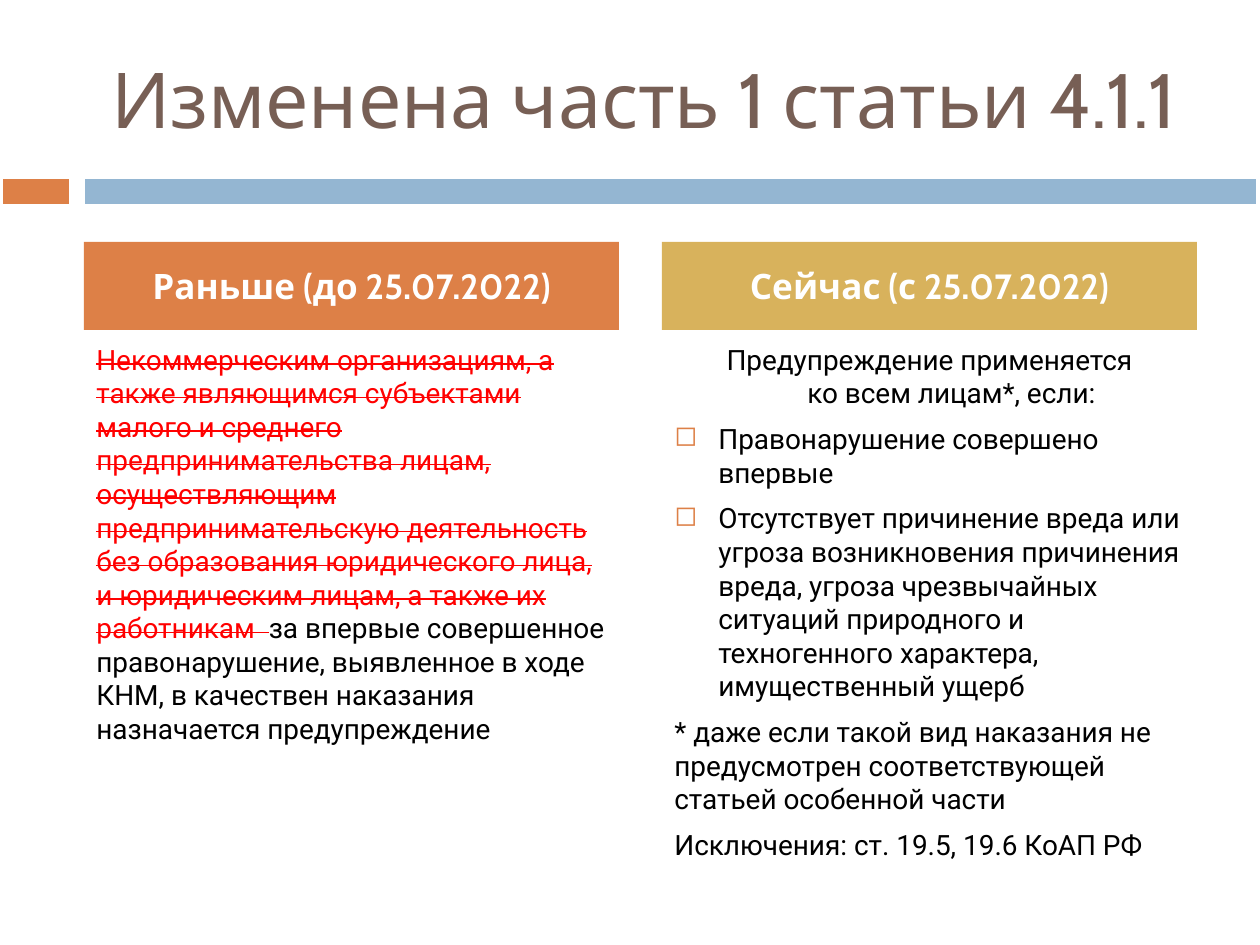
from lxml.etree import SubElement
from pptx import Presentation
from pptx.dml.color import RGBColor
from pptx.enum.shapes import MSO_SHAPE as Shape
from pptx.enum.text import MSO_ANCHOR as Anchor, PP_ALIGN as Align
from pptx.oxml.ns import qn
from pptx.util import Emu, Pt

# Content
TITLE = " Изменена часть 1 статьи 4.1.1 "
BANDS = [  # left, top, width, height, colour
    (0, 170, 1260, 44, "FFFFFF"),
    (0, 176, 73, 32, "DD8047"),
    (82, 176, 1178, 32, "94B6D2"),
]
# A paragraph is a style and its runs; a run is a text and whether it is deleted
BEFORE = [
    ("plain", [
        ("Некоммерческим организациям, а также являющимся субъектами малого и "
         "среднего предпринимательства лицам, осуществляющим предпринимательскую "
         "деятельность без образования юридического лица, и юридическим лицам, "
         "а также их работникам  ", True),
        ("за впервые совершенное правонарушение, выявленное в ходе КНМ, "
         "в качествен наказания назначается предупреждение", False),
    ]),
]
NOW = [
    ("lead", [("Предупреждение применяется\nко всем лицам*, если:", False)]),
    ("bullet", [("Правонарушение совершено впервые", False)]),
    ("bullet", [("Отсутствует причинение вреда или угроза возникновения причинения "
                 "вреда, угроза чрезвычайных ситуаций природного и техногенного "
                 "характера, имущественный ущерб", False)]),
    ("plain", [("* даже если такой вид наказания не предусмотрен соответствующей "
                "статьей особенной части", False)]),
    ("plain", [("Исключения: ст. 19.5, 19.6 КоАП РФ", False)]),
]
COLUMNS = [
    ("Раньше (до 25.07.2022)", "DD8047", BEFORE),
    ("Сейчас (с 25.07.2022)", "D8B25C", NOW),
]

# Layout in px
PX_PER_INCH = 126
SLIDE = (1260, 945)
COLUMN_LEFT, COLUMN_WIDTH, COLUMN_STEP = 84, 535, 578
HEADER_TOP, HEADER_HEIGHT = 242, 88
BODY_TOP, BODY_HEIGHT = 336, 494
INDENT = 44


def px(value):
    return Emu(round(value * 914400 / PX_PER_INCH))


def rgb(value):
    return RGBColor.from_string(value)


def add_rect(left, top, width, height, colour):
    shape = slide.shapes.add_shape(
        Shape.RECTANGLE, px(left), px(top), px(width), px(height))
    shape.shadow.inherit = False
    shape.fill.solid()
    shape.fill.fore_color.rgb = rgb(colour)
    shape.line.fill.background()
    return shape


def add_text_box(left, top, width, height):
    box = slide.shapes.add_textbox(px(left), px(top), px(width), px(height))
    box.text_frame.word_wrap = True
    return box


def set_font(font, name, size, colour, bold=False):
    font.name, font.size, font.bold = name, Pt(size), bold
    font.color.rgb = rgb(colour)


def write_heading(shape, text, size, colour, bold=False, space=0):
    shape.text_frame.vertical_anchor = Anchor.MIDDLE
    paragraph = shape.text_frame.paragraphs[0]
    paragraph.text = text
    paragraph.alignment = Align.CENTER
    paragraph.space_before = Pt(space)
    set_font(paragraph.font, "Cabin", size, colour, bold)


def set_bullet(properties):
    colour = SubElement(properties, qn("a:buClr"))
    SubElement(colour, qn("a:srgbClr"), val="DD8047")
    SubElement(properties, qn("a:buChar"), char="◻")


def write_paragraph(paragraph, style, runs):
    paragraph.space_before = Pt(7)
    paragraph.alignment = Align.CENTER if style == "lead" else Align.LEFT
    properties = paragraph._p.get_or_add_pPr()
    if style != "plain":
        properties.set("marL", str(px(INDENT)))
        properties.set("indent", str(px(-INDENT)))
    if style == "bullet":
        set_bullet(properties)
    set_font(paragraph.font, "Roboto", 16, "000000")
    for text, deleted in runs:
        for number, line in enumerate(text.split("\n")):
            if number:
                paragraph.add_line_break()
            run = paragraph.add_run()
            run.text = line
            if deleted:
                run.font.color.rgb = rgb("FF0000")
                run._r.get_or_add_rPr().set("strike", "sngStrike")


presentation = Presentation()
presentation.slide_width, presentation.slide_height = map(px, SLIDE)
slide = presentation.slides.add_slide(presentation.slide_layouts[6])

# Divider under the title
for band in BANDS:
    line = add_rect(*band).line
    line.color.rgb = rgb("FFFFFF")
    line.width = Pt(4)

# Title
write_heading(add_text_box(73, 38, 1124, 120), TITLE, 44, "775F55")

# Two compared columns
for index, (heading, colour, paragraphs) in enumerate(COLUMNS):
    left = COLUMN_LEFT + index * COLUMN_STEP
    header = add_rect(left, HEADER_TOP, COLUMN_WIDTH, HEADER_HEIGHT, colour)
    write_heading(header, heading, 20, "FFFFFF", bold=True, space=7)
    frame = add_text_box(left, BODY_TOP, COLUMN_WIDTH, BODY_HEIGHT).text_frame
    for number, (style, runs) in enumerate(paragraphs):
        paragraph = frame.add_paragraph() if number else frame.paragraphs[0]
        write_paragraph(paragraph, style, runs)

presentation.save("out.pptx")
